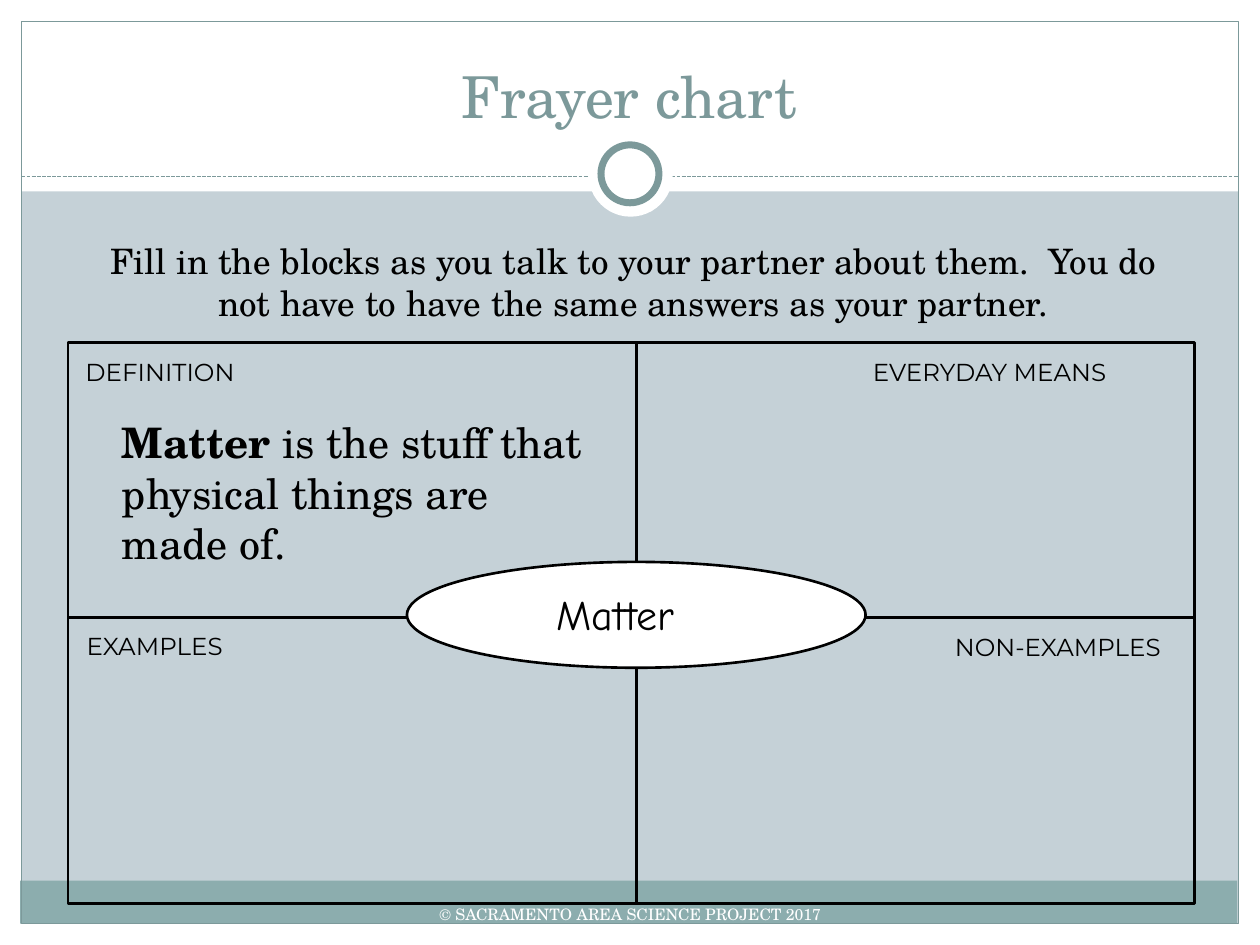
from dataclasses import dataclass

import pptx
import pptx.dml.color
import pptx.enum.dml
import pptx.enum.shapes
import pptx.enum.text
import pptx.oxml.ns
import pptx.shapes.autoshape
import pptx.shapes.connector
import pptx.slide
import pptx.util
from lxml import etree

COLS, ROWS = 100, 75
WIDTH, HEIGHT = pptx.util.Inches(10), pptx.util.Inches(7.5)
SERIF, SANS, COMIC = "TeX Gyre Schola", "Montserrat", "Comic Neue"
WHITE, BLACK, TEAL, BAND, PALE = "FFFFFF", "000000", "7C999A", "8CADAE", "C5D1D7"
RECT = pptx.enum.shapes.MSO_SHAPE.RECTANGLE
OVAL = pptx.enum.shapes.MSO_SHAPE.OVAL
LEFT, CENTER = pptx.enum.text.PP_ALIGN.LEFT, pptx.enum.text.PP_ALIGN.CENTER
TOP = pptx.enum.text.MSO_ANCHOR.TOP
MIDDLE = pptx.enum.text.MSO_ANCHOR.MIDDLE
BOTTOM = pptx.enum.text.MSO_ANCHOR.BOTTOM


@dataclass(frozen=True)
class Box:
    col: float
    row: float
    cols: float
    rows: float


@dataclass(frozen=True)
class Panel:
    box: Box
    kind: int = RECT
    fill: str | None = None
    line: str | None = None
    weight: float = 0.75


@dataclass(frozen=True)
class Rule:
    start: tuple[float, float]
    end: tuple[float, float]
    color: str = BLACK
    weight: float = 1.5
    dashed: bool = False


@dataclass(frozen=True)
class Label:
    box: Box
    runs: tuple[tuple[str, bool], ...]
    size: float
    font: str
    color: str = BLACK
    align: int = LEFT
    anchor: int = TOP
    inset: float = 0.05


def rgb(color: str) -> pptx.dml.color.RGBColor:
    return pptx.dml.color.RGBColor.from_string(color)


def across(cols: float) -> int:
    return round(WIDTH * cols / COLS)


def down(rows: float) -> int:
    return round(HEIGHT * rows / ROWS)


def place(box: Box) -> tuple[int, int, int, int]:
    return across(box.col), down(box.row), across(box.cols), down(box.rows)


def add_panel(s: pptx.slide.Slide, panel: Panel) -> pptx.shapes.autoshape.Shape:
    sp = s.shapes.add_shape(panel.kind, *place(panel.box))
    sp.shadow.inherit = False
    if panel.fill:
        sp.fill.solid()
        sp.fill.fore_color.rgb = rgb(panel.fill)
    else:
        sp.fill.background()
    if panel.line:
        sp.line.color.rgb = rgb(panel.line)
        sp.line.width = pptx.util.Pt(panel.weight)
    else:
        sp.line.fill.background()
    return sp


def add_rule(s: pptx.slide.Slide, rule: Rule) -> pptx.shapes.connector.Connector:
    (x1, y1), (x2, y2) = rule.start, rule.end
    line = s.shapes.add_connector(
        pptx.enum.shapes.MSO_CONNECTOR.STRAIGHT, across(x1), down(y1), across(x2), down(y2)
    )
    line.line.color.rgb = rgb(rule.color)
    line.line.width = pptx.util.Pt(rule.weight)
    if rule.dashed:
        line.line.dash_style = pptx.enum.dml.MSO_LINE.SQUARE_DOT
        dash = line.line._ln.find(pptx.oxml.ns.qn("a:prstDash"))
        dash.set("val", "sysDash")
    etree.SubElement(line._element.spPr, pptx.oxml.ns.qn("a:effectLst"))
    return line


def add_label(s: pptx.slide.Slide, label: Label) -> pptx.shapes.autoshape.Shape:
    sp = s.shapes.add_textbox(*place(label.box))
    tf = sp.text_frame
    tf.word_wrap = True
    tf.vertical_anchor = label.anchor
    tf.margin_top = tf.margin_bottom = pptx.util.Inches(label.inset)
    p = tf.paragraphs[0]
    p.alignment = label.align
    for text, bold in label.runs:
        r = p.add_run()
        r.text = text
        r.font.name = label.font
        r.font.size = pptx.util.Pt(label.size)
        r.font.bold = bold
        r.font.color.rgb = rgb(label.color)
    return sp


def plain(text: str) -> tuple[tuple[str, bool], ...]:
    return ((text, False),)


EDGE = 1.7
FRAME = Box(5.4, 27.2, 89.4, 44.5)
CROSS_COL, CROSS_ROW = 50.5, 49

BACKDROP = [
    Panel(Box(0, ROWS - EDGE, COLS, EDGE), fill=WHITE),
    Panel(Box(0, 0, COLS, 15.2), fill=WHITE),
    Panel(Box(0, 0, EDGE, ROWS), fill=WHITE),
    Panel(Box(COLS - EDGE, 0, EDGE, ROWS), fill=WHITE),
    Panel(Box(1.6, 69.9, 96.6, 3.4), fill=BAND),
    Panel(Box(EDGE, EDGE, COLS - 2 * EDGE, ROWS - 2 * EDGE), line=TEAL),
    Rule((EDGE, 14), (COLS - EDGE, 14), TEAL, 0.75, True),
    Panel(Box(46.7, 10.5, 6.7, 6.7), OVAL, WHITE),
    Panel(Box(47.7, 11.5, 4.6, 4.6), OVAL, WHITE, TEAL, 4),
]

HEADINGS = [
    Label(Box(30.2, 70.6, 39.6, 4), plain("© SACRAMENTO AREA SCIENCE PROJECT 2017"),
          9, SERIF, WHITE, CENTER, MIDDLE),
    Label(Box(3.3, 2.5, 93.3, 8.3), plain("Frayer chart"), 33, SERIF, TEAL, CENTER, BOTTOM),
]

CHART = [
    Panel(FRAME, line=BLACK, weight=1.5),
    Rule((CROSS_COL, FRAME.row), (CROSS_COL, FRAME.row + FRAME.rows)),
    Rule((FRAME.col + FRAME.cols, CROSS_ROW), (FRAME.col, CROSS_ROW)),
    Panel(Box(32.3, 44.6, 36.4, 8.4), OVAL, WHITE, BLACK, 1.5),
]

QUADRANTS = [
    ("DEFINITION", Box(5.8, 27.3, 19.9, 3.1)),
    ("EVERYDAY MEANS", Box(68.3, 27.3, 25.7, 3.5)),
    ("EXAMPLES", Box(5.9, 49.1, 22.7, 3.4)),
    ("NON-EXAMPLES", Box(74.8, 49.2, 19.1, 3)),
]

CONTENT = [
    Label(Box(43.2, 45.7, 14.3, 4.4), plain("Matter"), 24, COMIC, inset=0.1),
    Label(Box(5.8, 18.5, 89, 7.7),
          plain("Fill in the blocks as you talk to your partner about them.  "
                "You do not have to have the same answers as your partner."),
          20, SERIF, align=CENTER),
    Label(Box(8.7, 32.6, 39.3, 13.1),
          (("Matter", True), (" is the stuff that physical things are made of.", False)),
          24, SERIF),
]


def main() -> None:
    prs = pptx.Presentation()
    prs.slide_width, prs.slide_height = WIDTH, HEIGHT
    s = prs.slides.add_slide(prs.slide_layouts[6])
    s.background.fill.solid()
    s.background.fill.fore_color.rgb = rgb(PALE)
    quadrants = [Label(box, plain(name), 14, SANS, inset=0.1) for name, box in QUADRANTS]
    draw = {Panel: add_panel, Rule: add_rule, Label: add_label}
    for item in BACKDROP + HEADINGS + CHART + quadrants + CONTENT:
        draw[type(item)](s, item)
    prs.save("out.pptx")


if __name__ == "__main__":
    main()
